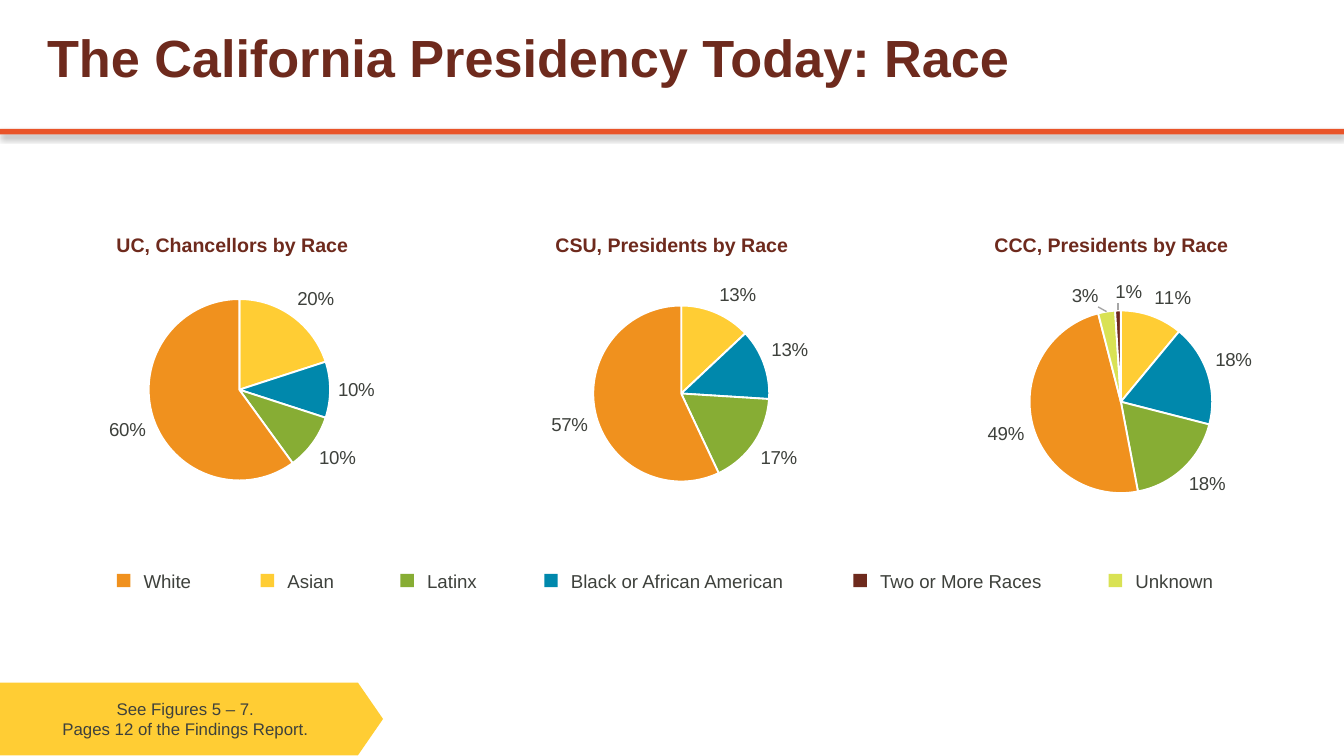
from dataclasses import dataclass

from lxml import etree
from pptx import Presentation
from pptx.chart.data import CategoryChartData
from pptx.dml.color import RGBColor
from pptx.enum.chart import XL_CHART_TYPE as ChartType, XL_LABEL_POSITION as LabelPosition
from pptx.enum.shapes import MSO_SHAPE as ShapeType
from pptx.enum.text import MSO_ANCHOR as Anchor, MSO_AUTO_SIZE as AutoSize, PP_ALIGN as Align
from pptx.oxml import parse_xml
from pptx.oxml.ns import nsdecls, qn
from pptx.util import Inches, Pt


@dataclass(frozen=True)
class Theme:
    font: str = "Arial"
    heading: str = "6E2A1D"
    body: str = "3E413C"
    rule: str = "E95429"
    callout: str = "FFCD34"
    outline: str = "FFFFFF"
    leader: str = "A6A6A6"
    title_size: float = 28
    chart_title_size: float = 10.5
    label_size: float = 10
    callout_size: float = 9


THEME = Theme()
RACE_COLORS = {
    "White": "F0911E",
    "Asian": "FFCD34",
    "Latinx": "87AD34",
    "Black or African American": "0088AC",
    "Two or More Races": "6E2A1D",
    "Unknown": "D9E254",
}
PIE_ORDER = ["Asian", "Black or African American", "Latinx", "White", "Unknown", "Two or More Races"]
PIES = [
    ("UC, Chancellors by Race", [0.2, 0.1, 0.1, 0.6], (1.4, 1.3, 1.35), {}),
    ("CSU, Presidents by Race", [0.13, 0.13, 0.17, 0.57], (1.42, 1.33, 1.31), {}),
    ("CCC, Presidents by Race", [0.11, 0.18, 0.18, 0.49, 0.03, 0.01], (1.42, 1.39, 1.36),
     {4: (-0.02, 0.01), 5: (0.03, 0)}),
]
LEGEND_OFFSETS = [0, 1.07, 2.11, 3.18, 5.48, 7.38]
LEGEND_WIDTHS = [0.84, 0.64, 1.25, 1.9, 1.5, 0.78]


def style_font(font, size, color, bold=False):
    font.name = THEME.font
    font.size = Pt(size)
    font.bold = bold
    font.color.rgb = RGBColor.from_string(color)


def write_text(frame, text, size=THEME.label_size, color=THEME.body, bold=False,
               align=Align.LEFT, anchor=Anchor.TOP):
    frame.word_wrap = True
    frame.vertical_anchor = anchor
    frame.text = text
    paragraph = frame.paragraphs[0]
    paragraph.alignment = align
    for run in paragraph.runs:
        style_font(run.font, size, color, bold)


def add_block(slide, kind, box, color):
    shape = slide.shapes.add_shape(kind, *map(Inches, box))
    shape.shadow.inherit = False
    shape.fill.solid()
    shape.fill.fore_color.rgb = RGBColor.from_string(color)
    shape.line.fill.background()
    return shape


def add_header(slide, left, top, width):
    rule = add_block(slide, ShapeType.RECTANGLE, (left, top + 0.96, width, 0.04), THEME.rule)
    effects = rule._element.spPr.find(qn("a:effectLst"))
    effects.append(parse_xml(
        f'<a:outerShdw {nsdecls("a")} blurRad="{Pt(3.1)}" dist="{Pt(1.8)}" dir="5400000" rotWithShape="0">'
        '<a:srgbClr val="000000"><a:alpha val="35000"/></a:srgbClr></a:outerShdw>'))
    title = slide.shapes.title
    title.left, title.top = Inches(left + 0.25), Inches(top + 0.07)
    title.width, title.height = Inches(7.75), Inches(0.71)
    write_text(title.text_frame, "The California Presidency Today: Race", size=THEME.title_size,
               color=THEME.heading, bold=True, anchor=Anchor.MIDDLE)


def manual_layout(**values):
    layout = etree.Element(qn("c:layout"))
    manual = etree.SubElement(layout, qn("c:manualLayout"))
    for name, value in values.items():
        etree.SubElement(manual, qn(f"c:{name}"), val=str(value))
    return layout


def place_plot(chart, width, height, center_x, center_y, diameter):
    plot_area = chart._chartSpace.chart.plotArea
    for layout in plot_area.findall(qn("c:layout")):
        plot_area.remove(layout)
    plot_area.insert(0, manual_layout(
        layoutTarget="inner", xMode="edge", yMode="edge",
        x=round((center_x - diameter / 2) / width, 3),
        y=round((center_y - diameter / 2) / height, 3),
        w=round(diameter / width, 3), h=round(diameter / height, 3)))


def shift_labels(series, label_shifts):
    for index, (shift_x, shift_y) in label_shifts.items():
        label = series.points[index].data_label
        style_font(label.font, THEME.label_size, THEME.body)
        label.position = LabelPosition.OUTSIDE_END
        element = series._element.xpath(f"c:dLbls/c:dLbl[c:idx/@val='{index}']")[0]
        element.insert(1, manual_layout(x=shift_x, y=shift_y))
    labels = series._element.find(qn("c:dLbls"))
    for name in ("c:showLeaderLines", "c:leaderLines"):
        for element in labels.findall(qn(name)):
            labels.remove(element)
    etree.SubElement(labels, qn("c:showLeaderLines"), val="1")
    labels.append(parse_xml(
        f'<c:leaderLines {nsdecls("c", "a")}><c:spPr><a:ln w="{Pt(0.75)}"><a:solidFill>'
        f'<a:srgbClr val="{THEME.leader}"/></a:solidFill></a:ln></c:spPr></c:leaderLines>'))


def add_pie(slide, left, top, width, height, title, values, pie, label_shifts):
    data = CategoryChartData(number_format="0%")
    data.categories = [str(number) for number in range(1, len(values) + 1)]
    data.add_series(title, values)
    box = map(Inches, (left, top, width, height))
    chart = slide.shapes.add_chart(ChartType.PIE, *box, data).chart
    style_font(chart.font, THEME.label_size, THEME.body)
    chart.has_legend = False
    chart.has_title = True
    write_text(chart.chart_title.text_frame, title, size=THEME.chart_title_size,
               color=THEME.heading, bold=True, align=Align.CENTER)
    chart.chart_title.include_in_layout = False
    place_plot(chart, width, height, *pie)

    plot = chart.plots[0]
    plot.vary_by_categories = True
    series = plot.series[0]
    labels = series.data_labels
    labels.show_value = True
    labels.number_format, labels.number_format_is_linked = "0%", False
    labels.position = LabelPosition.OUTSIDE_END
    style_font(labels.font, THEME.label_size, THEME.body)
    for index, race in enumerate(PIE_ORDER[:len(values)]):
        point = series.points[index]
        point.format.fill.solid()
        point.format.fill.fore_color.rgb = RGBColor.from_string(RACE_COLORS[race])
        point.format.line.color.rgb = RGBColor.from_string(THEME.outline)
        point.format.line.width = Pt(1)
    shift_labels(series, label_shifts)


def add_pie_row(slide, left, top, width, height):
    pie_width = 2.7
    step = (width - pie_width) / (len(PIES) - 1)
    for index, (title, values, pie, shifts) in enumerate(PIES):
        add_pie(slide, left + index * step, top, pie_width, height, title, values, pie, shifts)


def add_legend(slide, left, top):
    marker = 0.1
    for (race, color), offset, width in zip(RACE_COLORS.items(), LEGEND_OFFSETS, LEGEND_WIDTHS):
        add_block(slide, ShapeType.RECTANGLE, (left + offset, top + 0.08, marker, marker), color)
        label_box = map(Inches, (left + offset + marker, top, width, 0.27))
        label = slide.shapes.add_textbox(*label_box)
        write_text(label.text_frame, race)
        label.text_frame.auto_size = AutoSize.SHAPE_TO_FIT_TEXT


def add_callout(slide, left, top, width, height):
    callout = add_block(slide, ShapeType.PENTAGON, (left, top, width, height), THEME.callout)
    callout.adjustments[0] = 0.345
    write_text(callout.text_frame, "See Figures 5 – 7.\vPages 12 of the Findings Report.",
               size=THEME.callout_size, align=Align.CENTER, anchor=Anchor.MIDDLE)


def main():
    presentation = Presentation()
    presentation.slide_width = Inches(10)
    presentation.slide_height = presentation.slide_width * 9 // 16
    slide = presentation.slides.add_slide(presentation.slide_layouts[5])
    add_header(slide, 0, 0, 10)
    add_callout(slide, 0, 5.08, 2.85, 0.54)
    add_pie_row(slide, 0.38, 1.6, 9.24, 2.3)
    add_legend(slide, 0.87, 4.19)
    presentation.save("out.pptx")


if __name__ == "__main__":
    main()
